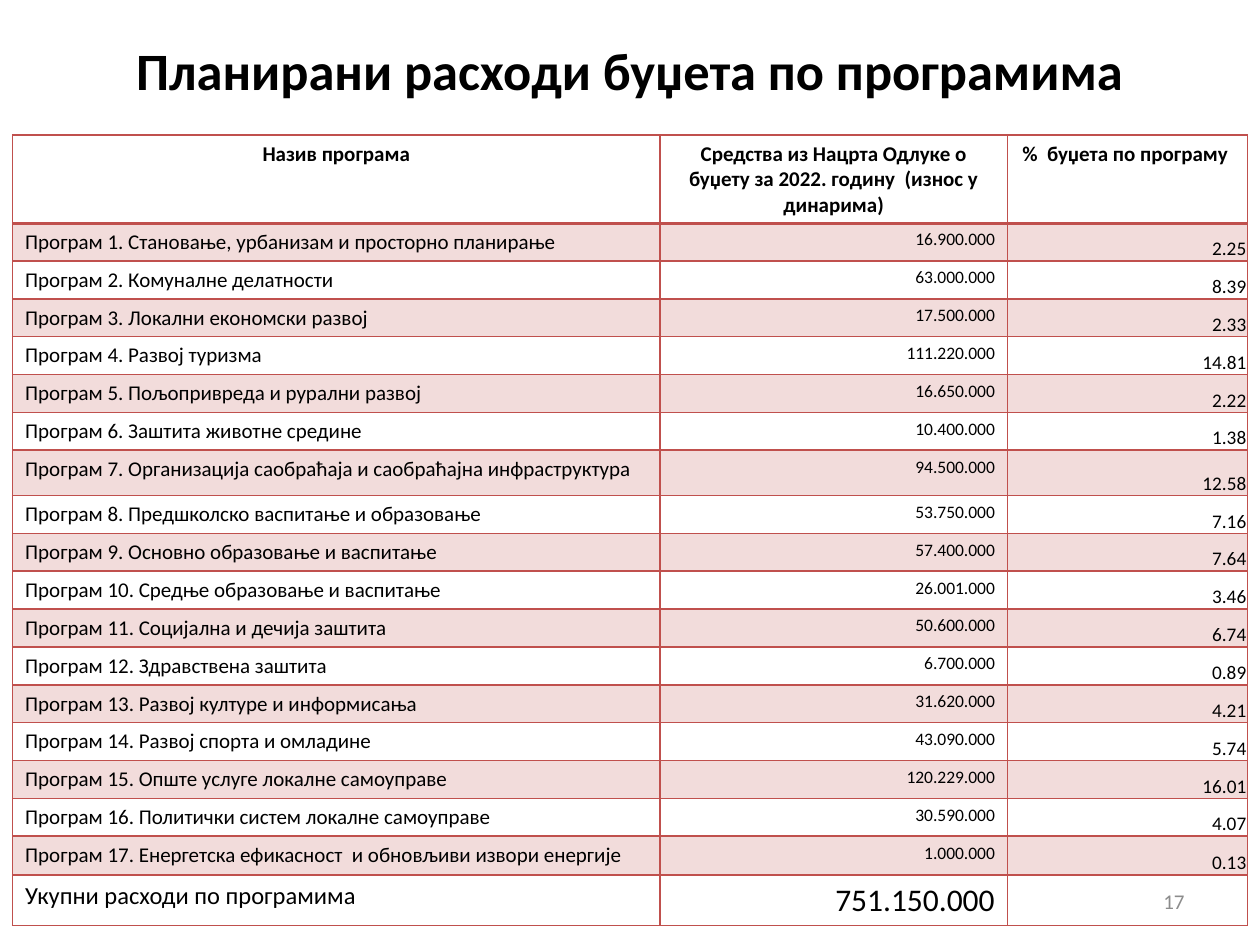
from typing import NamedTuple

from lxml import etree
from pptx import Presentation
from pptx import util as u
from pptx.dml import color
from pptx.enum import text
from pptx.oxml import ns

RED, BLACK, GREY = "C0504D", "000000", "8C8C8C"
LEFT, CENTER, RIGHT = text.PP_ALIGN.LEFT, text.PP_ALIGN.CENTER, text.PP_ALIGN.RIGHT
TOP, MIDDLE, BOTTOM = text.MSO_ANCHOR.TOP, text.MSO_ANCHOR.MIDDLE, text.MSO_ANCHOR.BOTTOM
TIGHT = (0.75, 0.75, 0.75, 0)
NORMAL = (7.2, 3.6, 7.2, 3.6)


class Style(NamedTuple):
    size: float
    align: text.PP_ALIGN = LEFT
    bold: bool = False
    hue: str = BLACK
    anchor: text.MSO_ANCHOR = TOP
    margins: tuple = NORMAL


class Row(NamedTuple):
    name: str
    amount: str
    share: str
    height: float = 20.88


TITLE = Style(30, CENTER, True, anchor=MIDDLE)
NUMBER = Style(12, RIGHT, hue=GREY, anchor=MIDDLE)
HEADER_STYLES = [Style(12, CENTER, True)] * 3
BODY_STYLES = [Style(12), Style(10, RIGHT), Style(11, RIGHT, anchor=BOTTOM, margins=TIGHT)]
TOTAL_STYLES = [Style(14), Style(18, RIGHT), Style(18)]

HEADER = Row("Назив програма",
             "Средства из Нацрта Одлуке о буџету за 2022. годину  (износ у динарима)",
             "%  буџета по програму ", 35.28)
PROGRAMS = [
    Row("Становање, урбанизам и просторно планирање", "16.900.000", "2.25"),
    Row("Комуналне делатности", "63.000.000", "8.39"),
    Row("Локални економски развој", "17.500.000", "2.33"),
    Row("Развој туризма", "111.220.000", "14.81"),
    Row("Пољопривреда и рурални развој", "16.650.000", "2.22"),
    Row("Заштита животне средине", "10.400.000", "1.38"),
    Row("Организација саобраћаја и саобраћајна инфраструктура", "94.500.000", "12.58", 25.92),
    Row("Предшколско васпитање и образовање", "53.750.000", "7.16"),
    Row("Основно образовање и васпитање", "57.400.000", "7.64"),
    Row("Средње образовање и васпитање", "26.001.000", "3.46"),
    Row("Социјална и дечија заштита", "50.600.000", "6.74"),
    Row("Здравствена заштита", "6.700.000", "0.89"),
    Row("Развој културе и информисања", "31.620.000", "4.21"),
    Row("Развој спорта и омладине", "43.090.000", "5.74"),
    Row("Опште услуге локалне самоуправе", "120.229.000", "16.01"),
    Row("Политички систем локалне самоуправе", "30.590.000", "4.07"),
    Row("Енергетска ефикасност  и обновљиви извори енергије", "1.000.000", "0.13", 22.32),
]
TOTAL = Row("Укупни расходи по програмима", "751.150.000", "", 28.08)


def rgb(code: str) -> color.RGBColor:
    return color.RGBColor.from_string(code)


def write(frame, words: str, style: Style) -> None:
    """Put one formatted paragraph into a text frame."""
    para = frame.paragraphs[0]
    para.alignment = style.align
    if words:
        span = para.add_run()
        span.text = words
        font = span.font
    else:
        font = para.font
    formats = {"name": "Calibri", "size": u.Pt(style.size), "bold": style.bold}
    for key, value in formats.items():
        setattr(font, key, value)
    font.color.rgb = rgb(style.hue)


def set_margins(target, style: Style) -> None:
    for side, gap in zip(("left", "top", "right", "bottom"), style.margins):
        setattr(target, f"margin_{side}", u.Pt(gap))
    target.vertical_anchor = style.anchor


def add_text(page, place: tuple, words: str, style: Style) -> None:
    box = page.shapes.add_textbox(*map(u.Pt, place))
    frame = box.text_frame
    frame.word_wrap = True
    set_margins(frame, style)
    write(frame, words, style)


def add_borders(cell, top: float, bottom: float) -> None:
    props = cell._tc.get_or_add_tcPr()
    for side, width in {"L": 1, "R": 1, "T": top, "B": bottom}.items():
        line = etree.SubElement(props, ns.qn(f"a:ln{side}"), w=str(u.Pt(width)))
        fill = etree.SubElement(line, ns.qn("a:solidFill"))
        etree.SubElement(fill, ns.qn("a:srgbClr"), val=RED)


def shade(cell, tinted: bool) -> None:
    """Tint a cell with 20 % red, or leave it clear."""
    if not tinted:
        cell.fill.background()
        return
    cell.fill.solid()
    cell.fill.fore_color.rgb = rgb(RED)
    tone = cell._tc.tcPr.find(".//" + ns.qn("a:srgbClr") + "[last()]")
    tone = cell._tc.tcPr.find(ns.qn("a:solidFill")).find(ns.qn("a:srgbClr"))
    etree.SubElement(tone, ns.qn("a:alpha"), val="20000")


def add_budget_table(page, rows: list, widths: tuple) -> None:
    place = (7.2, 77.04, sum(widths), sum(row.height for row in rows))
    table = page.shapes.add_table(len(rows), len(widths), *map(u.Pt, place)).table
    table.first_row = table.horz_banding = False
    for column, width in zip(table.columns, widths):
        column.width = u.Pt(width)
    last = len(rows) - 1
    for index, row in enumerate(rows):
        table.rows[index].height = u.Pt(row.height)
        styles = {0: HEADER_STYLES, last: TOTAL_STYLES}.get(index, BODY_STYLES)
        for column, (words, style) in enumerate(zip(row[:3], styles)):
            cell = table.cell(index, column)
            set_margins(cell, style)
            write(cell.text_frame, words, style)
            add_borders(cell, 2 if index == 1 else 1, 2 if index == 0 else 1)
            shade(cell, index % 2 == 1 and index < last)


def main() -> None:
    deck = Presentation()
    deck.slide_width, deck.slide_height = u.Pt(720), u.Pt(540)
    page = deck.slides.add_slide(deck.slide_layouts[6])

    # Title and page number
    add_text(page, (53.28, 9.36, 613.44, 61.2), "Планирани расходи буџета по програмима", TITLE)
    add_text(page, (516.24, 500.4, 167.76, 28.8), "17", NUMBER)

    # Budget by program
    programs = [row._replace(name=f"Програм {number}. {row.name}")
                for number, row in enumerate(PROGRAMS, 1)]
    add_budget_table(page, [HEADER, *programs, TOTAL], (370, 198.5, 137.3))

    deck.save("out.pptx")


if __name__ == "__main__":
    main()
